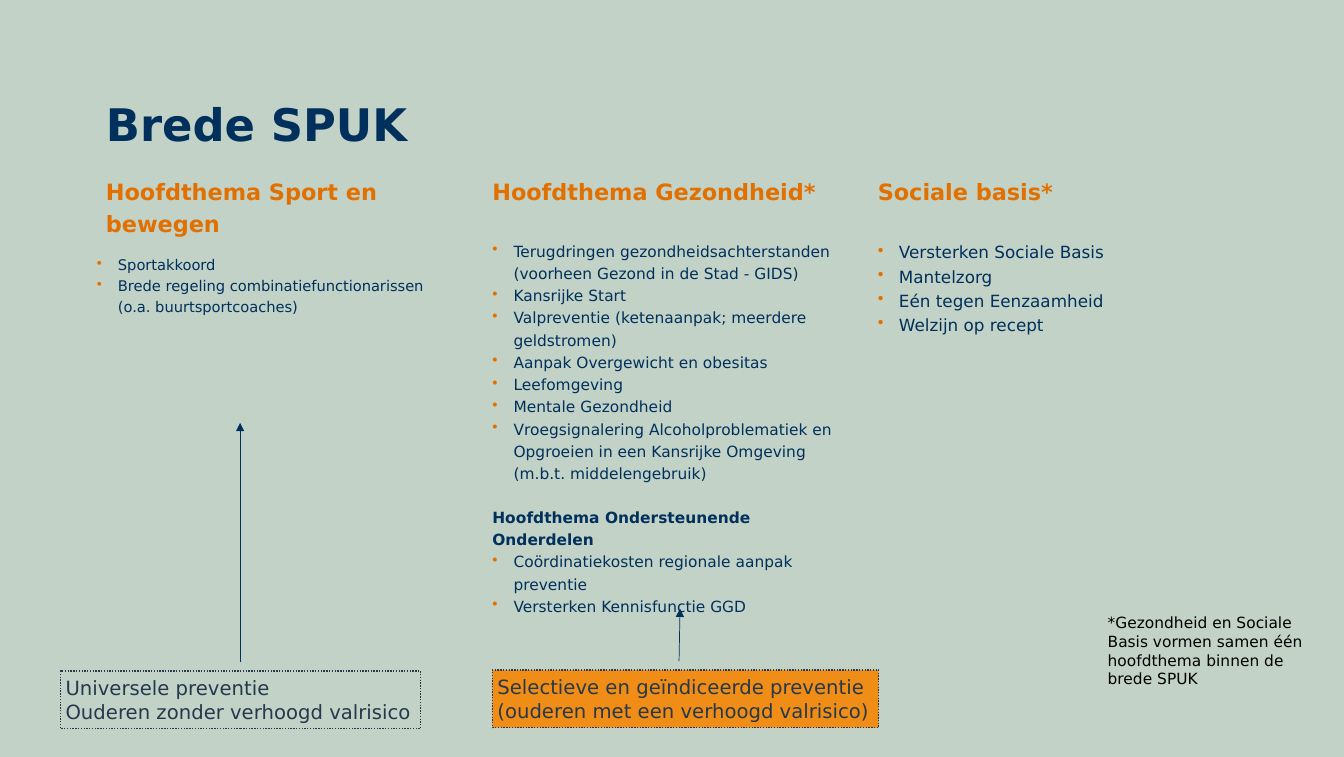
from lxml import etree
from pptx import Presentation
from pptx.dml.color import RGBColor
from pptx.enum.dml import MSO_LINE
from pptx.enum.shapes import MSO_CONNECTOR, MSO_SHAPE
from pptx.enum.text import MSO_ANCHOR, MSO_AUTO_SIZE, PP_ALIGN
from pptx.oxml.ns import qn
from pptx.util import Inches, Pt

FONT = "DejaVu Sans"
COLORS = {
    "background": "C2D2C7",
    "navy": "00305B",
    "orange": "E17000",
    "box": "F08D17",
    "slate": "26384B",
    "black": "000000",
}
COLUMN_LEFTS = [1.05, 4.88, 8.7]
COLUMN_WIDTH = 3.57
BULLET_INDENT = Inches(0.21)

THEMES = ["Hoofdthema Sport en bewegen", "Hoofdthema Gezondheid*", "Sociale basis*"]
SPORT = [
    "Sportakkoord",
    "Brede regeling combinatiefunctionarissen (o.a. buurtsportcoaches)",
]
HEALTH = [
    "Terugdringen gezondheidsachterstanden (voorheen Gezond in de Stad - GIDS)",
    "Kansrijke Start",
    "Valpreventie (ketenaanpak; meerdere geldstromen)",
    "Aanpak Overgewicht en obesitas",
    "Leefomgeving",
    "Mentale Gezondheid",
    "Vroegsignalering Alcoholproblematiek en Opgroeien in een Kansrijke Omgeving "
    "(m.b.t. middelengebruik)",
]
SUPPORT_HEADING = "Hoofdthema Ondersteunende Onderdelen"
SUPPORT = [
    "Coördinatiekosten regionale aanpak preventie",
    "Versterken Kennisfunctie GGD",
]
SOCIAL = [
    "Versterken Sociale Basis",
    "Mantelzorg",
    "Eén tegen Eenzaamheid",
    "Welzijn op recept",
]
FOOTNOTE = "*Gezondheid en Sociale Basis vormen samen één hoofdthema binnen de brede SPUK"


def rgb(color):
    return RGBColor.from_string(COLORS[color])


def set_frame(frame, inset_x=0, inset_y=0, **settings):
    values = {
        "word_wrap": True,
        "vertical_anchor": MSO_ANCHOR.TOP,
        "margin_left": Inches(inset_x),
        "margin_right": Inches(inset_x),
        "margin_top": Inches(inset_y),
        "margin_bottom": Inches(inset_y),
        **settings,
    }
    for name, value in values.items():
        setattr(frame, name, value)


def add_paragraph(frame, text, size, color, bold=False, **settings):
    """Write into the frame's empty first paragraph, or append a new one."""
    first = frame.paragraphs[0]
    paragraph = frame.add_paragraph() if first.runs else first
    for name, value in {"alignment": PP_ALIGN.LEFT, **settings}.items():
        setattr(paragraph, name, value)
    run = paragraph.add_run()
    run.text = text
    for name, value in {"name": FONT, "size": Pt(size), "bold": bold}.items():
        setattr(run.font, name, value)
    run.font.color.rgb = rgb(color)
    return paragraph


def add_bullets(frame, items, size):
    for item in items:
        paragraph = add_paragraph(frame, item, size, "navy", line_spacing=1.2)
        properties = paragraph._p.get_or_add_pPr()
        properties.set("marL", str(BULLET_INDENT))
        properties.set("indent", str(-BULLET_INDENT))
        bullet_color = etree.SubElement(properties, qn("a:buClr"))
        etree.SubElement(bullet_color, qn("a:srgbClr"), val=COLORS["orange"])
        etree.SubElement(properties, qn("a:buChar"), char="•")


def add_text_frame(slide, left, top, width, height, **settings):
    box = slide.shapes.add_textbox(*map(Inches, (left, top, width, height)))
    set_frame(box.text_frame, **settings)
    return box.text_frame


def add_prevention_box(slide, left, top, width, lines, fill=None):
    shape = slide.shapes.add_shape(
        MSO_SHAPE.RECTANGLE, *map(Inches, (left, top, width, 0.57)))
    shape.shadow.inherit = False
    if fill:
        shape.fill.solid()
        shape.fill.fore_color.rgb = rgb(fill)
    else:
        shape.fill.background()
    shape.line.color.rgb = rgb("slate")
    shape.line.width = Pt(1)
    shape.line.dash_style = MSO_LINE.ROUND_DOT
    set_frame(shape.text_frame, 0.05, 0.05, auto_size=MSO_AUTO_SIZE.SHAPE_TO_FIT_TEXT)
    for line in lines:
        add_paragraph(shape.text_frame, line, 14, "slate")


def add_arrow(slide, *ends):
    arrow = slide.shapes.add_connector(MSO_CONNECTOR.STRAIGHT, *map(Inches, ends))
    arrow.line.color.rgb = rgb("navy")
    arrow.line.width = Pt(0.5)
    etree.SubElement(arrow.line._get_or_add_ln(), qn("a:tailEnd"), type="triangle")
    etree.SubElement(arrow._element.spPr, qn("a:effectLst"))


def main():
    presentation = Presentation()
    presentation.slide_width = Inches(13.32)
    presentation.slide_height = Inches(7.5)
    slide = presentation.slides.add_slide(presentation.slide_layouts[6])
    slide.background.fill.solid()
    slide.background.fill.fore_color.rgb = rgb("background")

    title = add_text_frame(slide, COLUMN_LEFTS[0], 0.23, 11.22, 1.26,
                           vertical_anchor=MSO_ANCHOR.BOTTOM)
    add_paragraph(title, "Brede SPUK", 32, "navy", bold=True)
    for left, theme in zip(COLUMN_LEFTS, THEMES):
        heading = add_text_frame(slide, left, 1.71, COLUMN_WIDTH, 0.37)
        add_paragraph(heading, theme, 16, "orange", bold=True, line_spacing=1.2)

    sport = add_text_frame(slide, 0.96, 2.5, COLUMN_WIDTH, 2.8)
    add_bullets(sport, SPORT, 10.5)
    health = add_text_frame(slide, COLUMN_LEFTS[1], 2.36, COLUMN_WIDTH, 4.28)
    add_bullets(health, HEALTH, 11)
    add_paragraph(health, SUPPORT_HEADING, 11, "navy", bold=True,
                  line_spacing=1.2, space_before=Pt(15.5))
    add_bullets(health, SUPPORT, 11)
    social = add_text_frame(slide, COLUMN_LEFTS[2], 2.36, COLUMN_WIDTH, 3.86)
    add_bullets(social, SOCIAL, 12)

    footnote = add_text_frame(slide, 10.88, 6.03, 2.26, 0.84, inset_x=0.1, inset_y=0.05,
                              auto_size=MSO_AUTO_SIZE.SHAPE_TO_FIT_TEXT)
    add_paragraph(footnote, FOOTNOTE, 11, "black")

    add_prevention_box(slide, 0.6, 6.65, COLUMN_WIDTH,
                       ["Universele preventie", "Ouderen zonder verhoogd valrisico"])
    add_arrow(slide, 2.38, 6.56, 2.38, 4.19)
    add_prevention_box(slide, COLUMN_LEFTS[1], 6.64, 3.83,
                       ["Selectieve en geïndiceerde preventie",
                        "(ouderen met een verhoogd valrisico)"], fill="box")
    add_arrow(slide, 6.73, 6.55, 6.74, 6.03)

    presentation.save("out.pptx")


if __name__ == "__main__":
    main()
